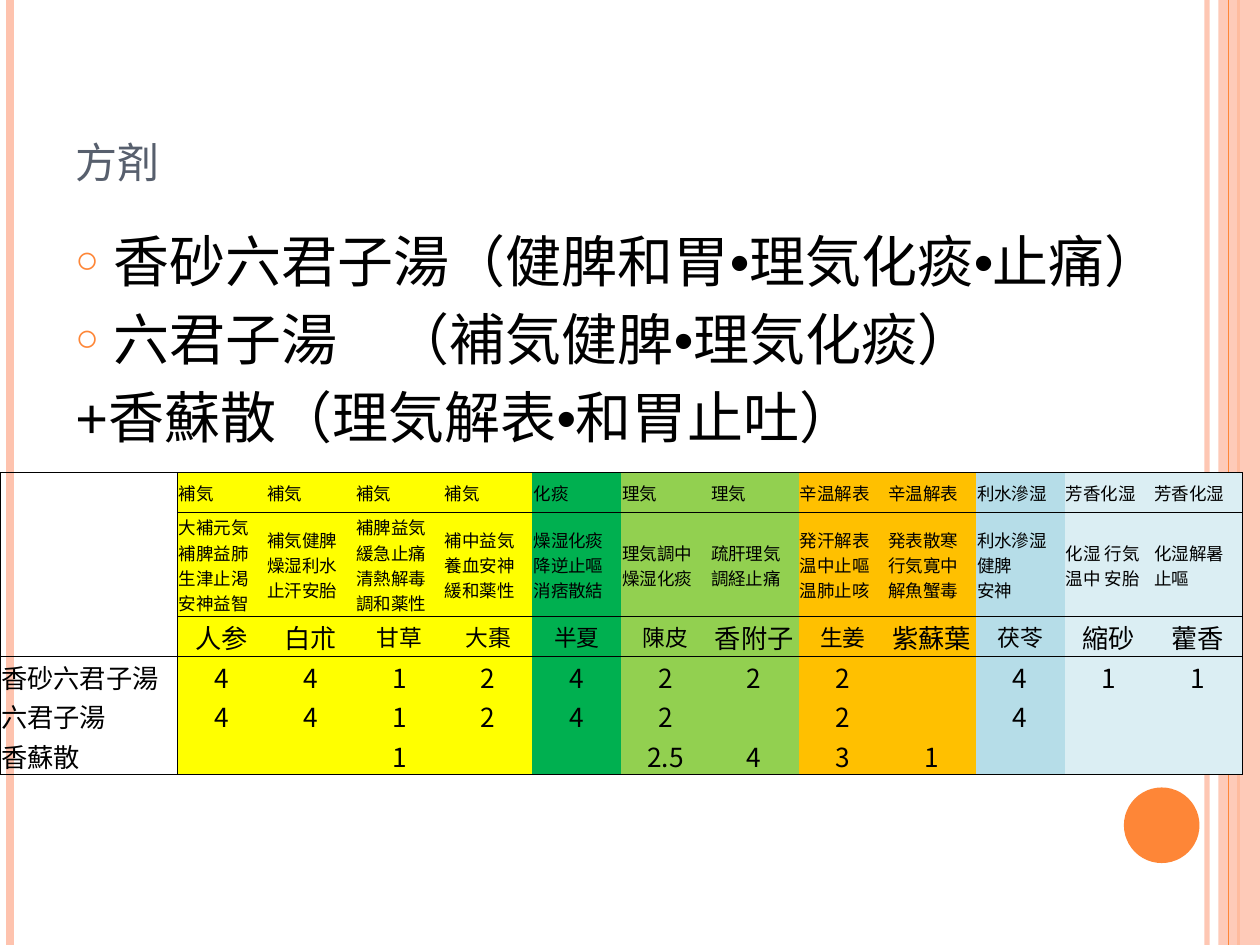
from copy import deepcopy

from lxml import etree
from pptx import Presentation
from pptx.dml.color import RGBColor
from pptx.enum.shapes import MSO_CONNECTOR, MSO_SHAPE
from pptx.enum.text import MSO_ANCHOR, PP_ALIGN
from pptx.oxml.ns import qn
from pptx.util import Inches, Pt

STRAIGHT = MSO_CONNECTOR.STRAIGHT
RECTANGLE, OVAL = MSO_SHAPE.RECTANGLE, MSO_SHAPE.OVAL
TOP, MIDDLE, BOTTOM = MSO_ANCHOR.TOP, MSO_ANCHOR.MIDDLE, MSO_ANCHOR.BOTTOM
LEFT, CENTER = PP_ALIGN.LEFT, PP_ALIGN.CENTER

COLORS = {
    "peach": "FEC3AE", "orange": "FE8637", "slate": "575F6D", "black": "000000",
    "yellow": "FFFF00", "green": "00B050", "lime": "92D050", "amber": "FFC000",
    "blue": "B6DDE8", "pale": "DBEEF3",
}
TEXT_FONT, TABLE_FONT = "Arial", "Noto Sans CJK JP"

STRIPES = [(9.58, "peach", 3, 93), (0.08, "peach", 4.5, 100), (9.83, "orange", 1.5, 100)]
INNER_STRIPE = (9.75, "orange", 0.75, 100)
TITLE = "方剤"
FORMULAS = [
    ("香砂六君子湯（健脾和胃•理気化痰•止痛）", True),
    ("六君子湯　（補気健脾•理気化痰）", True),
    ("+香蘇散（理気解表•和胃止吐）", False),
]
FORMULA_NAMES = ["香砂六君子湯", "六君子湯", "香蘇散"]
HERBS = [
    ("yellow", "補気", "大補元気\n補脾益肺\n生津止渇\n安神益智", "人参", 15, ("4", "4", "")),
    ("yellow", "補気", "補気健脾\n燥湿利水\n止汗安胎", "白朮", 15, ("4", "4", "")),
    ("yellow", "補気", "補脾益気\n緩急止痛\n清熱解毒\n調和薬性", "甘草", 13, ("1", "1", "1")),
    ("yellow", "補気", "補中益気\n養血安神\n緩和薬性", "大棗", 13, ("2", "2", "")),
    ("green", "化痰", "燥湿化痰\n降逆止嘔\n消痞散結", "半夏", 13, ("4", "4", "")),
    ("lime", "理気", "理気調中\n燥湿化痰", "陳皮", 13, ("2", "2", "2.5")),
    ("lime", "理気", "疏肝理気\n調経止痛", "香附子", 15, ("2", "", "4")),
    ("amber", "辛温解表", "発汗解表\n温中止嘔\n温肺止咳", "生姜", 13, ("2", "2", "3")),
    ("amber", "辛温解表", "発表散寒\n行気寛中\n解魚蟹毒", "紫蘇葉", 15, ("", "", "1")),
    ("blue", "利水滲湿", "利水滲湿\n健脾\n安神", "茯苓", 13, ("4", "4", "")),
    ("pale", "芳香化湿", "化湿 行気\n温中 安胎", "縮砂", 15, ("1", "", "")),
    ("pale", "芳香化湿", "化湿解暑\n止嘔", "藿香", 15, ("1", "", "")),
]
ROW_HEIGHTS = [0.32, 0.82, 0.32, 0.31, 0.32, 0.31]
TABLE_WIDTH, NAME_WIDTH = 9.86, 1.41
HERB_WIDTH = (TABLE_WIDTH - NAME_WIDTH) / len(HERBS)
HEADER_ROWS = 3


def rgb(name):
    return RGBColor.from_string(COLORS[name])


def apply(target, values):
    for name, value in values.items():
        setattr(target, name, value)


def add_xml(parent, tag, **attributes):
    return etree.SubElement(parent, qn(tag), attributes)


def set_alpha(properties, percent):
    for color in properties.iter(qn("a:srgbClr")):
        add_xml(color, "a:alpha", val=str(percent * 1000))


def add_stripe(slide, x, color, width, alpha):
    line = slide.shapes.add_connector(STRAIGHT, Inches(x), 0, Inches(x), Inches(7.5))
    line.line.color.rgb = rgb(color)
    line.line.width = Pt(width)
    properties = line._element.spPr
    if alpha < 100:
        set_alpha(properties, alpha)
    add_xml(properties, "a:effectLst")


def add_block(slide, kind, box, color):
    shape = slide.shapes.add_shape(kind, *map(Inches, box))
    shape.shadow.inherit = False
    shape.fill.solid()
    shape.fill.fore_color.rgb = rgb(color)
    shape.line.fill.background()
    return shape


def add_text_frame(slide, box, anchor):
    frame = slide.shapes.add_textbox(*map(Inches, box)).text_frame
    apply(frame, {"word_wrap": True, "vertical_anchor": anchor})
    return frame


def style_runs(paragraph, font, size, color):
    for run in paragraph.runs:
        apply(run.font, {"name": font, "size": Pt(size)})
        run.font.color.rgb = rgb(color)
        add_xml(run._r.rPr, "a:ea", typeface=font)


def add_formulas(slide):
    frame = add_text_frame(slide, (0.5, 1.75, 9, 2.47), TOP)
    for index, (text, bulleted) in enumerate(FORMULAS):
        paragraph = frame.add_paragraph() if index else frame.paragraphs[0]
        paragraph.text = text
        paragraph.space_before = Pt(6)
        style_runs(paragraph, TEXT_FONT, 32, "black")
        properties = paragraph._p.get_or_add_pPr()
        properties.set("marL", str(Inches(0.3)))
        properties.set("indent", str(Inches(-0.3)))
        if bulleted:
            add_xml(add_xml(properties, "a:buClr"), "a:srgbClr", val=COLORS["orange"])
            add_xml(properties, "a:buSzPct", val="70000")
            add_xml(properties, "a:buFont", typeface=TEXT_FONT)
            add_xml(properties, "a:buChar", char="○")
        else:
            add_xml(properties, "a:buNone")


def set_borders(cell, row, column):
    last_row, last_column = len(ROW_HEIGHTS) - 1, len(HERBS)
    ruled = column > 0
    edges = {
        "a:lnL": column <= 1,
        "a:lnR": column in (0, last_column),
        "a:lnT": row in (0, HEADER_ROWS) or (ruled and row < HEADER_ROWS),
        "a:lnB": row in (HEADER_ROWS - 1, last_row) or (ruled and row < HEADER_ROWS),
    }
    properties = cell._tc.get_or_add_tcPr()
    for tag, drawn in edges.items():
        edge = add_xml(properties, tag, w=str(Pt(0.5)))
        if drawn:
            add_xml(add_xml(edge, "a:solidFill"), "a:srgbClr", val=COLORS["black"])
        else:
            add_xml(edge, "a:noFill")


def fill_cell(cell, text, size, alignment, color):
    margin = Inches(0.01)
    apply(cell, {"margin_left": margin, "margin_right": margin, "margin_top": margin,
                 "margin_bottom": 0, "vertical_anchor": MIDDLE})
    if color:
        cell.fill.solid()
        cell.fill.fore_color.rgb = rgb(color)
    else:
        cell.fill.background()
    paragraph = cell.text_frame.paragraphs[0]
    apply(paragraph, {"text": text, "alignment": alignment})
    style_runs(paragraph, TABLE_FONT, size, "black")
    for line_break in paragraph._p.findall(qn("a:br")):
        line_break.insert(0, deepcopy(paragraph.runs[0]._r.rPr))
    if not text:
        add_xml(paragraph._p, "a:endParaRPr", sz=str(size * 100))


def add_herb_table(slide):
    columns = [[("", 15, LEFT, None)] * HEADER_ROWS
               + [(name, 15, LEFT, None) for name in FORMULA_NAMES]]
    for color, group, effects, herb, size, doses in HERBS:
        columns.append([(group, 10, LEFT, color), (effects, 10, LEFT, color),
                        (herb, size, CENTER, color)]
                       + [(dose, 15, CENTER, color) for dose in doses])
    widths = [NAME_WIDTH] + [HERB_WIDTH] * len(HERBS)
    table = slide.shapes.add_table(
        len(ROW_HEIGHTS), len(columns), 0, Inches(3.75),
        Inches(TABLE_WIDTH), Inches(sum(ROW_HEIGHTS))).table
    apply(table, {"first_row": False, "horz_banding": False})
    for row, height in enumerate(ROW_HEIGHTS):
        table.rows[row].height = Inches(height)
    for column, contents in enumerate(columns):
        table.columns[column].width = Inches(widths[column])
        for row, content in enumerate(contents):
            cell = table.cell(row, column)
            set_borders(cell, row, column)
            fill_cell(cell, *content)


def main():
    presentation = Presentation()
    apply(presentation, {"slide_width": Inches(10), "slide_height": Inches(7.5)})
    slide = presentation.slides.add_slide(presentation.slide_layouts[6])
    for stripe in STRIPES:
        add_stripe(slide, *stripe)
    band = add_block(slide, RECTANGLE, (9.67, 0, 0.33, 7.5), "peach")
    set_alpha(band._element.spPr, 87)
    add_stripe(slide, *INNER_STRIPE)
    add_block(slide, OVAL, (8.92, 6.25, 0.6, 0.6), "orange")
    title = add_text_frame(slide, (0.5, 0.3, 8.17, 1.25), BOTTOM).paragraphs[0]
    title.text = TITLE
    style_runs(title, TEXT_FONT, 30, "slate")
    title.runs[0]._r.rPr.set("cap", "small")
    add_formulas(slide)
    add_herb_table(slide)
    presentation.save("out.pptx")


if __name__ == "__main__":
    main()
